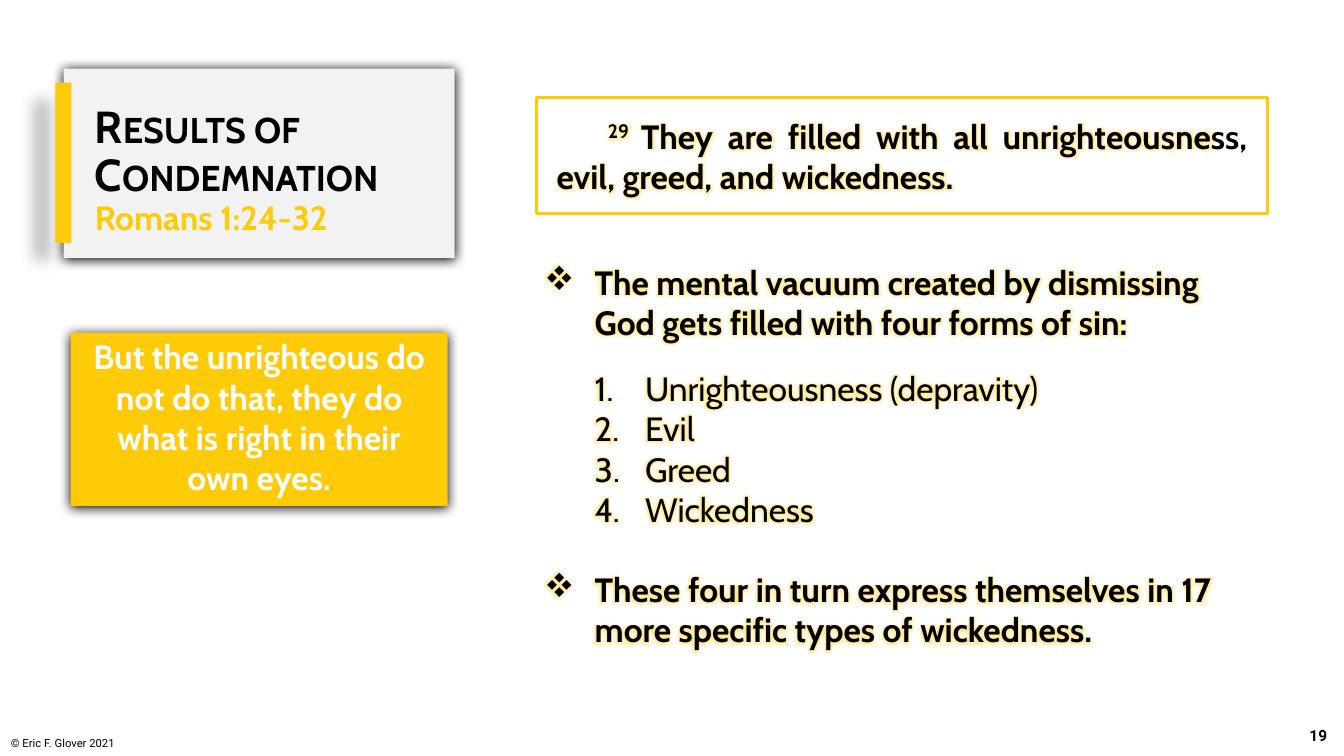
from lxml import etree
from pptx import Presentation
from pptx.dml.color import RGBColor
from pptx.enum.shapes import MSO_SHAPE
from pptx.enum.text import MSO_ANCHOR, PP_ALIGN
from pptx.oxml.ns import qn
from pptx.util import Inches, Pt

RECT = MSO_SHAPE.RECTANGLE
MIDDLE, TOP, BOTTOM = MSO_ANCHOR.MIDDLE, MSO_ANCHOR.TOP, MSO_ANCHOR.BOTTOM
LEFT, CENTER, JUSTIFY = PP_ALIGN.LEFT, PP_ALIGN.CENTER, PP_ALIGN.JUSTIFY
COLORS = {"black": "000000", "white": "FFFFFF", "gold": "FFCA08", "gray": "F2F2F2"}


def add_color_effect(parent, tag, color, alpha, **attrs):
    effect = etree.SubElement(parent, qn(tag), {k: str(v) for k, v in attrs.items()})
    clr = etree.SubElement(effect, qn("a:srgbClr"), val=COLORS[color])
    etree.SubElement(clr, qn("a:alpha"), val=str(alpha * 1000))


def add_run(p, text, size=24, color="black", bold=True, name="Cabin", glow=False, **attrs):
    r = p.add_run()
    r.text = text
    for key, value in {"size": Pt(size), "bold": bold, "name": name}.items():
        setattr(r.font, key, value)
    r.font.color.rgb = RGBColor.from_string(COLORS[color])
    rPr = r._r.get_or_add_rPr()
    for key, value in attrs.items():
        rPr.set(key, value)
    if glow:
        effects = etree.Element(qn("a:effectLst"))
        rPr.find(qn("a:solidFill")).addnext(effects)
        add_color_effect(effects, "a:glow", "gold", 40, rad=Pt(5))


prs = Presentation()
prs.slide_width, prs.slide_height = Inches(13.33), Inches(7.5)
s = prs.slides.add_slide(prs.slide_layouts[5])

soft = {"alpha": 100, "blurRad": Pt(8.5), "dist": Pt(1), "dir": 90 * 60000}
far = {"alpha": 28, "blurRad": Pt(11.8), "dist": Pt(19.7), "dir": 141 * 60000}
boxes = {
    "panel": ((0.63, 0.68, 3.88, 1.88), "gray", None, soft),
    "accent": ((0.55, 0.82, 0.16, 1.59), "gold", None, far),
    "verse": ((5.32, 0.97, 7.25, 1.15), "white", "gold", None),
    "comment": ((0.7, 3.3, 3.74, 1.72), "gold", None, soft),
}
shapes = {}
for name, (at, fill, line, shadow) in boxes.items():
    sp = s.shapes.add_shape(RECT, *map(Inches, at))
    sp.fill.solid()
    sp.fill.fore_color.rgb = RGBColor.from_string(COLORS[fill])
    if line:
        sp.line.color.rgb = RGBColor.from_string(COLORS[line])
        sp.line.width = Pt(2.25)
    else:
        sp.line.fill.background()
    sp.shadow.inherit = False
    if shadow:
        effects = sp.element.spPr.find(qn("a:effectLst"))
        add_color_effect(effects, "a:outerShdw", "black", **shadow, algn="ctr", rotWithShape=0)
    shapes[name] = sp

title = s.shapes.title
title.element.getparent().append(title.element)
shapes["title"] = title
for key, value in zip(("left", "top", "width", "height"), (0.94, 0.76, 3.5, 1.87)):
    setattr(title, key, Inches(value))

for name, at in {
    "points": (5.3, 2.55, 7.27, 4.11),
    "page number": (12.83, 7.11, 0.49, 0.38),
    "copyright": (0.01, 7.21, 1.57, 0.28),
}.items():
    shapes[name] = s.shapes.add_textbox(*map(Inches, at))

frames = {
    "title": (MIDDLE, LEFT, (0, 0, 0, 0)),
    "verse": (MIDDLE, JUSTIFY, (0.2, 0, 0.2, 0)),
    "comment": (MIDDLE, CENTER, (0.2, 0, 0.2, 0.05)),
    "points": (TOP, LEFT, (0.1, 0.05, 0.1, 0.05)),
    "page number": (MIDDLE, CENTER, (0.1, 0.05, 0.1, 0.05)),
    "copyright": (BOTTOM, LEFT, (0.1, 0.05, 0.1, 0.05)),
}
for name, (anchor, align, insets) in frames.items():
    tf = shapes[name].text_frame
    tf.word_wrap = True
    tf.vertical_anchor = anchor
    tf.paragraphs[0].alignment = align
    for side, inset in zip(("left", "top", "right", "bottom"), insets):
        setattr(tf, f"margin_{side}", Inches(inset))

tf = title.text_frame
for i, (text, fmt) in enumerate([
    ("Results of", {"size": 32, "cap": "small"}),
    ("Condemnation", {"size": 32, "cap": "small"}),
    ("Romans 1:24-32", {"color": "gold"}),
]):
    p = tf.add_paragraph() if i else tf.paragraphs[0]
    p.alignment = LEFT
    p.line_spacing = 0.9
    add_run(p, text, **fmt)

p = shapes["verse"].text_frame.paragraphs[0]
p._p.get_or_add_pPr().set("indent", str(Inches(0.51)))
add_run(p, "29 ", glow=True, baseline="30000")
add_run(p, "They are filled with all unrighteousness, evil, greed, and wickedness.", glow=True)

p = shapes["comment"].text_frame.paragraphs[0]
p.space_before = p.space_after = Pt(6)
add_run(p, "But the unrighteous do not do that, they do what is right in their own eyes.", color="white")

points = [
    (0, "The mental vacuum created by dismissing God gets filled with four forms of sin:", 18),
    (1, "Unrighteousness (depravity)", 0),
    (1, "Evil", 0),
    (1, "Greed", 0),
    (1, "Wickedness", 28.5),
    (0, "These four in turn express themselves in 17 more specific types of wickedness.", 0),
]
tf = shapes["points"].text_frame
for i, (level, text, after) in enumerate(points):
    p = tf.add_paragraph() if i else tf.paragraphs[0]
    p.level = level
    p.space_after = Pt(after)
    pPr = p._p.get_or_add_pPr()
    pPr.set("marL", str(Inches(0.5 + 0.5 * level)))
    pPr.set("indent", str(Inches(-0.5)))
    if level:
        etree.SubElement(pPr, qn("a:buAutoNum"), type="arabicPeriod")
    else:
        clr = etree.SubElement(pPr, qn("a:buClr"))
        etree.SubElement(clr, qn("a:srgbClr"), val=COLORS["black"])
        etree.SubElement(pPr, qn("a:buFont"), typeface="Wingdings", charset="2")
        etree.SubElement(pPr, qn("a:buChar"), char="v")
    add_run(p, text, bold=level == 0, glow=True)

add_run(shapes["page number"].text_frame.paragraphs[0], "19", 11, name="Roboto")
add_run(shapes["copyright"].text_frame.paragraphs[0], "© Eric F. Glover 2021", 8, bold=False, name="Roboto")

prs.save("out.pptx")
